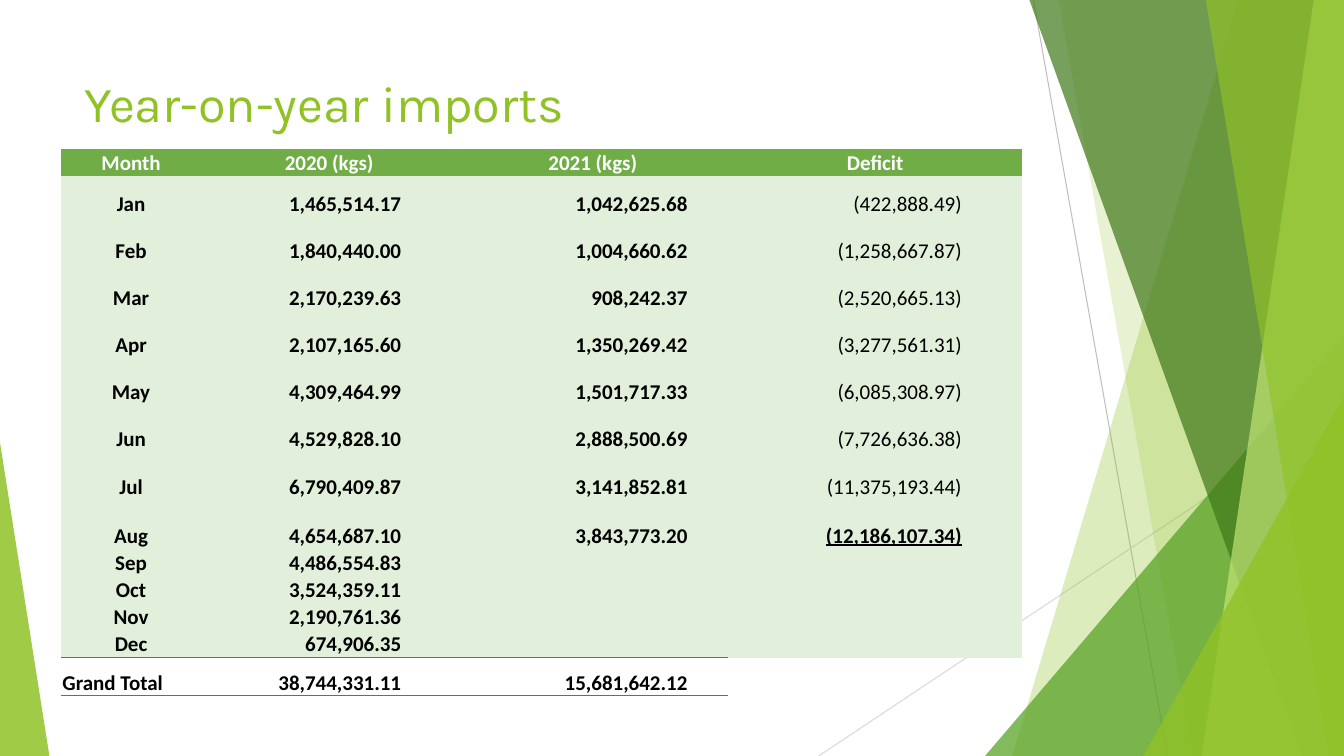
from lxml import etree
from pptx import Presentation
from pptx.dml.color import RGBColor
from pptx.enum.shapes import MSO_CONNECTOR, MSO_SHAPE
from pptx.enum.text import MSO_ANCHOR, MSO_AUTO_SIZE, PP_ALIGN
from pptx.oxml.ns import qn
from pptx.util import Inches, Pt

LIME = RGBColor(0x90, 0xC2, 0x26)
PALE_LIME = RGBColor(0xC0, 0xE4, 0x74)
GREEN = RGBColor(0x54, 0xA0, 0x21)
DARK_GREEN = RGBColor(0x3F, 0x78, 0x19)
HEADER_GREEN = RGBColor(0x70, 0xAD, 0x47)
BODY_GREEN = RGBColor(0xE2, 0xEF, 0xDA)
RULE_GREEN = RGBColor(0x54, 0x82, 0x35)
GREY = RGBColor(0xBF, 0xBF, 0xBF)
LIGHT_GREY = RGBColor(0xD9, 0xD9, 0xD9)
WHITE = RGBColor(0xFF, 0xFF, 0xFF)
BLACK = RGBColor(0, 0, 0)

WIDTH, HEIGHT = 13.33, 7.5
PLAIN_TABLE_STYLE = "{2D5ABB26-0587-4C30-8999-92F81FD0307C}"

HEADINGS = ("Month", "2020 (kgs)", "2021 (kgs)", "Deficit")
IMPORTS = (
    ("Jan", "1,465,514.17", "1,042,625.68", "(422,888.49)"),
    ("Feb", "1,840,440.00", "1,004,660.62", "(1,258,667.87)"),
    ("Mar", "2,170,239.63", "908,242.37", "(2,520,665.13)"),
    ("Apr", "2,107,165.60", "1,350,269.42", "(3,277,561.31)"),
    ("May", "4,309,464.99", "1,501,717.33", "(6,085,308.97)"),
    ("Jun", "4,529,828.10", "2,888,500.69", "(7,726,636.38)"),
    ("Jul", "6,790,409.87", "3,141,852.81", "(11,375,193.44)"),
    ("Aug", "4,654,687.10", "3,843,773.20", "(12,186,107.34)"),
    ("Sep", "4,486,554.83", "", ""),
    ("Oct", "3,524,359.11", "", ""),
    ("Nov", "2,190,761.36", "", ""),
    ("Dec", "674,906.35", "", ""),
)
TOTALS = ("Grand Total", "38,744,331.11", "15,681,642.12", "")
COLUMN_WIDTHS = (1.38, 2.55, 2.68, 2.92)
ROW_HEIGHTS = (0.27, 0.41, *[0.465] * 5, 0.48, 0.48, *[0.27] * 4, 0.38)
NUMBER_INSETS = (0.01, 0.56, 0.4, 0.6)


class ImportsSlide:
    table_font, table_size = "Calibri", Pt(15)
    title_font, title_size = "Karla", Pt(36)

    def __init__(self, presentation):
        self.slide = presentation.slides.add_slide(presentation.slide_layouts[5])

    def title(self, text, left, top, width, height):
        shape = self.slide.shapes.title
        shape.left, shape.top = Inches(left), Inches(top)
        shape.width, shape.height = Inches(width), Inches(height)
        frame = shape.text_frame
        frame.word_wrap = True
        frame.auto_size = MSO_AUTO_SIZE.NONE
        frame.vertical_anchor = MSO_ANCHOR.TOP
        paragraph = frame.paragraphs[0]
        paragraph.alignment = PP_ALIGN.LEFT
        run = paragraph.add_run()
        run.text = text
        run.font.name, run.font.size = self.title_font, self.title_size
        run.font.color.rgb = LIME

    def line(self, start, end, color):
        points = [Inches(value) for value in (*start, *end)]
        connector = self.slide.shapes.add_connector(MSO_CONNECTOR.STRAIGHT, *points)
        connector.line.color.rgb = color
        connector.line.width = Pt(0.75)
        etree.SubElement(connector._element.spPr, qn("a:effectLst"))

    def paint(self, shape, color, opacity):
        shape.shadow.inherit = False
        shape.line.fill.background()
        shape.fill.solid()
        shape.fill.fore_color.rgb = color
        fill_color = shape._element.spPr.find(qn("a:solidFill"))[0]
        etree.SubElement(fill_color, qn("a:alpha"), val=str(opacity * 1000))

    def shard(self, top_left, bottom_left, color, opacity):
        """Band from the given left edge to the right side of the slide."""
        corners = [(WIDTH, 0), (WIDTH, HEIGHT), (bottom_left, HEIGHT)]
        builder = self.slide.shapes.build_freeform(Inches(top_left), 0, scale=1.0)
        builder.add_line_segments([(Inches(x), Inches(y)) for x, y in corners], close=True)
        self.paint(builder.convert_to_shape(), color, opacity)

    def triangle(self, left, top, width, apex, color, opacity):
        """Triangle standing on the bottom of the slide."""
        shape = self.slide.shapes.add_shape(
            MSO_SHAPE.ISOSCELES_TRIANGLE, Inches(left), Inches(top),
            Inches(width), Inches(HEIGHT - top))
        shape.adjustments[0] = apex
        self.paint(shape, color, opacity)

    def table(self, left, top, rows):
        table = self.slide.shapes.add_table(
            len(rows), len(COLUMN_WIDTHS), Inches(left), Inches(top),
            Inches(sum(COLUMN_WIDTHS)), Inches(sum(ROW_HEIGHTS))).table
        table.first_row = table.horz_banding = False
        table._tbl.tblPr.find(qn("a:tableStyleId")).text = PLAIN_TABLE_STYLE
        for column, width in zip(table.columns, COLUMN_WIDTHS):
            column.width = Inches(width)
        for row, height in zip(table.rows, ROW_HEIGHTS):
            row.height = Inches(height)
        for row_index, values in enumerate(rows):
            for column_index, text in enumerate(values):
                self.cell(table.cell(row_index, column_index), text,
                          values, row_index, column_index)
        return table

    def cell(self, cell, text, values, row_index, column_index):
        is_header, is_total = row_index == 0, values is TOTALS
        is_number = not is_header and column_index > 0
        inset = NUMBER_INSETS[column_index] if is_number else 0.01
        cell.margin_left = cell.margin_top = Inches(0.01)
        cell.margin_right, cell.margin_bottom = Inches(inset), 0
        cell.vertical_anchor = MSO_ANCHOR.BOTTOM
        if is_total:
            cell.fill.background()
        else:
            cell.fill.solid()
            cell.fill.fore_color.rgb = HEADER_GREEN if is_header else BODY_GREEN
        paragraph = cell.text_frame.paragraphs[0]
        if not text:
            # Keep an empty cell as low as its row
            etree.SubElement(paragraph._p, qn("a:endParaRPr"), sz="1500")
            return
        if is_number:
            paragraph.alignment = PP_ALIGN.RIGHT
        else:
            paragraph.alignment = PP_ALIGN.LEFT if is_total else PP_ALIGN.CENTER
        run = paragraph.add_run()
        run.text = text
        font = run.font
        font.name, font.size = self.table_font, self.table_size
        font.color.rgb = WHITE if is_header else BLACK
        is_latest_deficit = is_number and column_index == 3 and values[0] == "Aug"
        font.bold = is_header or column_index < 3 or is_latest_deficit
        if is_latest_deficit:
            font.underline = True

    def border(self, cell, side, width):
        line = etree.Element(qn(f"a:ln{side}"), w=str(int(Pt(width))))
        fill = etree.SubElement(line, qn("a:solidFill"))
        etree.SubElement(fill, qn("a:srgbClr"), val=str(RULE_GREEN))
        cell._tc.get_or_add_tcPr().insert(0, line)


def main():
    presentation = Presentation()
    presentation.slide_width, presentation.slide_height = Inches(WIDTH), Inches(HEIGHT)
    page = ImportsSlide(presentation)

    # Background facets, back to front
    page.line((10.25, 0), (11.58, HEIGHT), GREY)
    page.line((WIDTH, 4.03), (8.12, HEIGHT), LIGHT_GREY)
    page.shard(12.28, 10.04, LIME, 30)
    page.shard(10.5, 11.83, LIME, 20)
    page.triangle(9.77, 3.33, 3.56, 1, GREEN, 72)
    page.shard(10.21, 12.91, DARK_GREEN, 70)
    page.shard(13.03, 11.92, PALE_LIME, 70)
    page.shard(11.96, 13.18, LIME, 65)
    page.triangle(11.34, 3.93, 1.99, 1, LIME, 80)
    page.triangle(0, 4.39, 0.49, 0, LIME, 85)

    # Title
    page.title("Year-on-year imports", 0.74, 0.67, 9.4, 1.44)

    # Monthly imports with ruled totals
    rows = (HEADINGS, *IMPORTS, TOTALS)
    table = page.table(0.61, 1.48, rows)
    last = len(rows) - 1
    for column_index in range(3):
        page.border(table.cell(last - 1, column_index), "B", 0.5)
        page.border(table.cell(last, column_index), "B", 1)
        page.border(table.cell(last, column_index), "T", 0.5)

    presentation.save("out.pptx")


if __name__ == "__main__":
    main()
